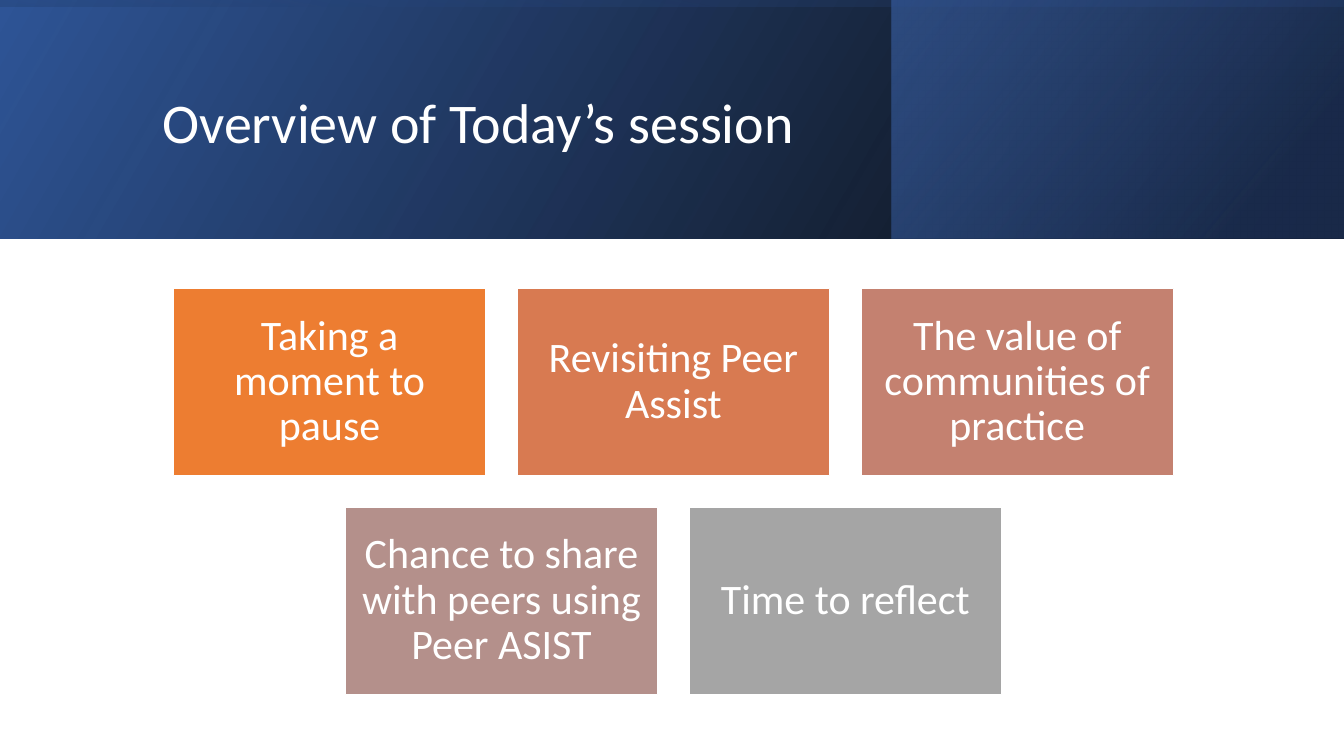
from lxml import etree
from pptx import Presentation
from pptx.dml.color import RGBColor
from pptx.enum.shapes import MSO_SHAPE
from pptx.enum.text import MSO_ANCHOR, MSO_AUTO_SIZE, PP_ALIGN
from pptx.oxml.ns import qn
from pptx.util import Inches, Pt

RECT = MSO_SHAPE.RECTANGLE
MIDDLE = MSO_ANCHOR.MIDDLE
NO_AUTOFIT = MSO_AUTO_SIZE.NONE
LEFT, CENTER = PP_ALIGN.LEFT, PP_ALIGN.CENTER

COLORS = {
    "white": "FFFFFF", "black": "000000", "navy": "203864",
    "deep_blue": "2F5597", "blue": "4472C4", "orange": "ED7D31",
    "copper": "D87A51", "clay": "C48170", "mauve": "B4908B", "gray": "A5A5A5",
}
CARD_ROWS = [
    [("Taking a moment to pause", "orange"),
     ("Revisiting Peer Assist", "copper"),
     ("The value of communities of practice", "clay")],
    [("Chance to share with peers using Peer ASIST", "mauve"),
     ("Time to reflect", "gray")],
]
CARD_W, CARD_H, CARD_GAP = 3.1, 1.86, 0.31
CARDS_CENTER, CARDS_TOP = 6.68, 2.86


def rgb(name):
    """Return the named colour."""
    return RGBColor.from_string(COLORS[name])


def add_rect(s, left, top, width, height):
    """Add a rectangle without shadow."""
    sp = s.shapes.add_shape(RECT, Inches(left), Inches(top),
                            Inches(width), Inches(height))
    sp.shadow.inherit = False
    return sp


def add_gradient_band(s, box, angle, stops, rotation=0):
    """Add a mirrored band with a translucent gradient."""
    sp = add_rect(s, *box)
    sp.rotation = rotation
    sp._element.spPr.find(qn("a:xfrm")).set("flipH", "1")
    sp.line.fill.background()
    sp.fill.gradient()
    sp.fill.gradient_angle = 360 - angle
    for stop, (position, color, opacity) in zip(sp.fill.gradient_stops, stops):
        stop.position = position / 100
        stop.color.rgb = rgb(color)
    for clr, (position, color, opacity) in zip(
            sp._element.spPr.iter(qn("a:srgbClr")), stops):
        etree.SubElement(clr, qn("a:alpha")).set("val", str(opacity * 1000))


def write_text(tf, text, size, align):
    """Write one white, vertically centred paragraph."""
    tf.word_wrap = True
    tf.auto_size = NO_AUTOFIT
    tf.vertical_anchor = MIDDLE
    p = tf.paragraphs[0]
    p.alignment = align
    p.line_spacing = 0.9
    r = p.add_run()
    r.text = text
    r.font.name = "Calibri"
    r.font.size = Pt(size)
    r.font.color.rgb = rgb("white")


def add_title(s, text):
    """Place the title in front of the header bands."""
    sp = s.shapes.title
    sp.left, sp.top = Inches(1.51), Inches(0.38)
    sp.width, sp.height = Inches(10.63), Inches(1.72)
    write_text(sp.text_frame, text, 40, LEFT)
    s.shapes._spTree.append(sp._element)


def add_card(s, left, top, text, color):
    """Add one agenda card."""
    sp = add_rect(s, left, top, CARD_W, CARD_H)
    sp.fill.solid()
    sp.fill.fore_color.rgb = rgb(color)
    sp.line.color.rgb = rgb("white")
    sp.line.width = Pt(1)
    tf = sp.text_frame
    tf.margin_left = tf.margin_right = Inches(0.12)
    tf.margin_top = tf.margin_bottom = Inches(0.12)
    write_text(tf, text, 30, CENTER)


def add_cards(s):
    """Lay out the agenda cards in centred rows."""
    for i, row in enumerate(CARD_ROWS):
        row_w = len(row) * (CARD_W + CARD_GAP) - CARD_GAP
        left = CARDS_CENTER - row_w / 2
        top = CARDS_TOP + i * (CARD_H + CARD_GAP)
        for j, (text, color) in enumerate(row):
            add_card(s, left + j * (CARD_W + CARD_GAP), top, text, color)


def main():
    """Build and save the agenda slide."""
    prs = Presentation()
    prs.slide_width, prs.slide_height = Inches(13.33), Inches(7.5)
    s = prs.slides.add_slide(prs.slide_layouts[5])
    add_gradient_band(s, (0, 0, 13.33, 2.37), 330,
                      [(0, "black", 96), (100, "deep_blue", 100)])
    add_gradient_band(s, (8.84, 0, 4.49, 2.37), 320,
                      [(19, "navy", 68), (100, "blue", 48)])
    add_gradient_band(s, (5.48, -5.48, 2.37, 13.33), 350,
                      [(23, "deep_blue", 16), (99, "black", 45)], rotation=270)
    add_title(s, "Overview of Today’s session")
    add_cards(s)
    prs.save("out.pptx")


if __name__ == "__main__":
    main()
